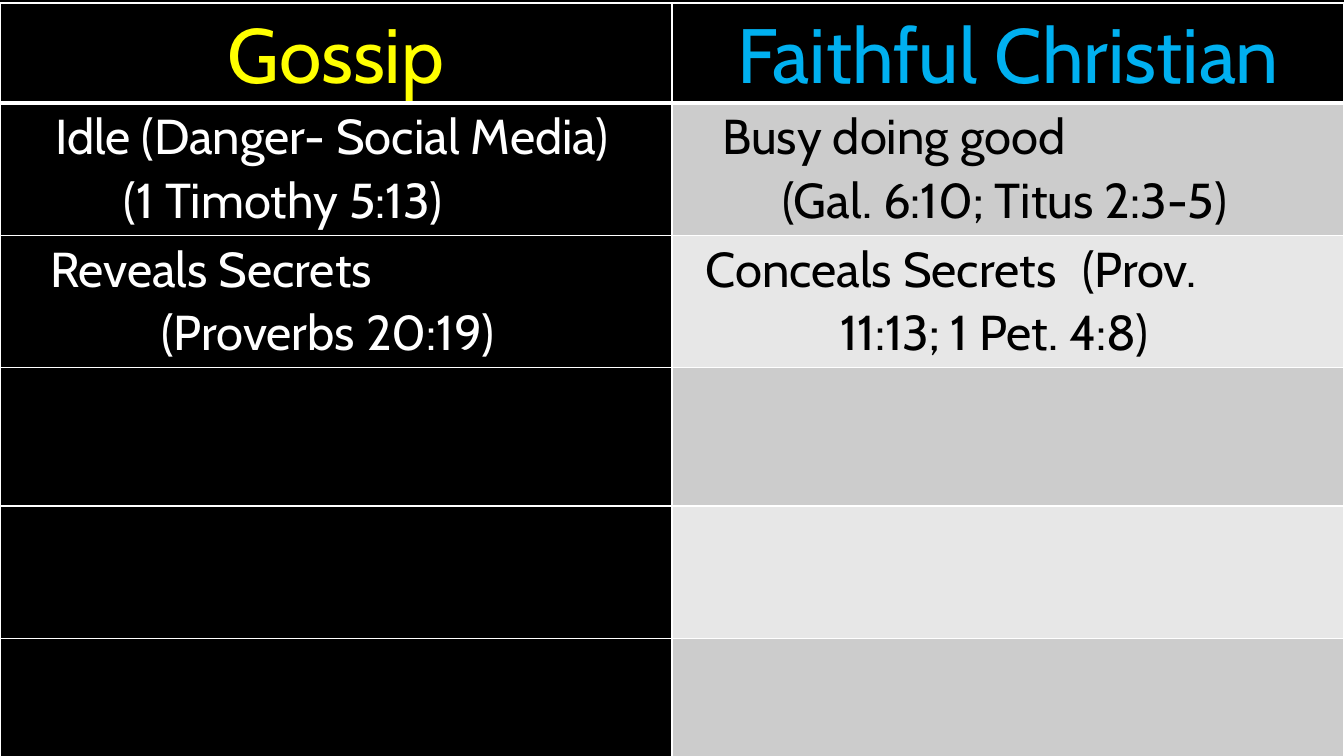
from dataclasses import dataclass

from lxml.etree import SubElement
from pptx import Presentation
from pptx.dml.color import RGBColor
from pptx.enum.text import MSO_ANCHOR as Anchor, PP_ALIGN as Align
from pptx.oxml.ns import qn
from pptx.util import Inches, Pt

WIDTH, HEIGHT = Inches(13.33), Inches(7.5)
TABLE_TOP = 0.004
COLUMN_SHARES = (0.5, 0.5)
ROW_SHARES = (0.128, 0.175, 0.175, 0.183, 0.175, 0.188)
BLACK, WHITE, YELLOW, BLUE = "000000", "FFFFFF", "FFFF00", "00B0F0"
BANDS = ("E7E7E7", "CCCCCC")
CELL_FORMAT = {
    "margin_left": Inches(0.07),
    "margin_right": Inches(0.07),
    "margin_top": 0,
    "margin_bottom": 0,
    "vertical_anchor": Anchor.TOP,
}


@dataclass(frozen=True)
class Line:
    text: str
    indent: float = 0
    tab: float = 0


@dataclass(frozen=True)
class Entry:
    lines: tuple[Line, ...]
    color: str
    size: int = 35
    align: Align = Align.LEFT


def heading(text: str, color: str) -> Entry:
    return Entry((Line(text),), color, 55, Align.CENTER)


ROWS = (
    (heading("Gossip", YELLOW), heading("Faithful Christian", BLUE)),
    (
        Entry((Line("Idle (Danger- Social Media)", 0.036), Line("(1 Timothy 5:13)", 0.087)), WHITE),
        Entry((Line("Busy doing good", 0.032), Line("(Gal. 6:10; Titus 2:3-5)", 0.077)), BLACK),
    ),
    (
        Entry((Line("Reveals Secrets", 0.032), Line("(Proverbs 20:19)", 0.115)), WHITE),
        Entry((Line("Conceals Secrets\t(Prov.", 0.02, 0.379), Line("11:13; 1 Pet. 4:8)", 0.12)), BLACK),
    ),
)


def rgb(color: str) -> RGBColor:
    return RGBColor.from_string(color)


def apply_format(target, values: dict) -> None:
    for name, value in values.items():
        setattr(target, name, value)


def paint(fill, color: str) -> None:
    fill.solid()
    fill.fore_color.rgb = rgb(color)


def draw_borders(cell, bottom: float, top: float) -> None:
    properties = cell._tc.get_or_add_tcPr()
    widths = {"a:lnL": 1, "a:lnR": 1, "a:lnT": top, "a:lnB": bottom}
    for position, (tag, points) in enumerate(widths.items()):
        border = SubElement(properties, qn(tag), w=str(Pt(points)))
        SubElement(SubElement(border, qn("a:solidFill")), qn("a:srgbClr"), val=WHITE)
        properties.insert(position, border)


def write_entry(cell, entry: Entry) -> None:
    frame = cell.text_frame
    for number, line in enumerate(entry.lines):
        paragraph = frame.add_paragraph() if number else frame.paragraphs[0]
        apply_format(paragraph, {"alignment": entry.align, "line_spacing": 1.07})
        properties = paragraph._p.get_or_add_pPr()
        properties.set("marL", "0")
        properties.set("indent", str(int(WIDTH * line.indent)))
        if line.tab:
            stops = SubElement(properties, qn("a:tabLst"))
            SubElement(stops, qn("a:tab"), pos=str(int(WIDTH * line.tab)), algn="l")
        run = paragraph.add_run()
        run.text = line.text
        apply_format(run.font, {"name": "Cabin", "size": Pt(entry.size), "bold": False})
        run.font.color.rgb = rgb(entry.color)


def draw_table(slide) -> None:
    shape = slide.shapes.add_table(
        len(ROW_SHARES), len(COLUMN_SHARES),
        0, int(HEIGHT * TABLE_TOP), WIDTH, int(HEIGHT * sum(ROW_SHARES)),
    )
    table = shape.table
    apply_format(table, {"first_row": False, "horz_banding": False})
    for column, share in zip(table.columns, COLUMN_SHARES):
        column.width = int(WIDTH * share)
    for row_number, (row, share) in enumerate(zip(table.rows, ROW_SHARES)):
        row.height = int(HEIGHT * share)
        for column_number, cell in enumerate(row.cells):
            banded = row_number > 0 and column_number > 0
            paint(cell.fill, BANDS[row_number % 2] if banded else BLACK)
            apply_format(cell, CELL_FORMAT)
            draw_borders(cell, 3 if row_number == 0 else 1, 3 if row_number == 1 else 1)
            if row_number < len(ROWS):
                write_entry(cell, ROWS[row_number][column_number])


def main() -> None:
    presentation = Presentation()
    apply_format(presentation, {"slide_width": WIDTH, "slide_height": HEIGHT})
    slide = presentation.slides.add_slide(presentation.slide_layouts[6])
    paint(slide.background.fill, BLACK)
    draw_table(slide)
    presentation.save("out.pptx")


if __name__ == "__main__":
    main()
